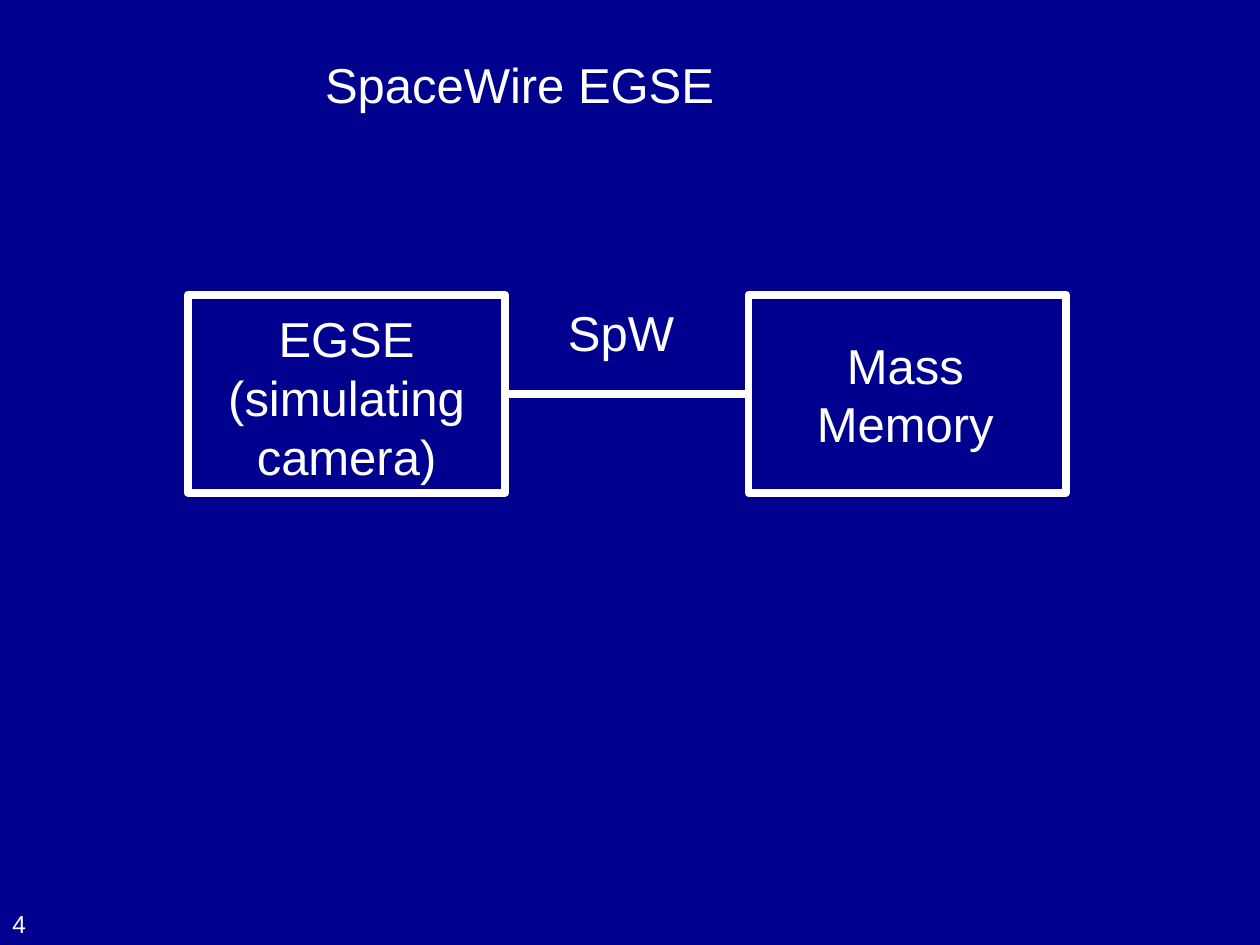
from pptx import Presentation, util as u
from pptx.dml.color import RGBColor
from pptx.enum import shapes, text
from pptx.oxml import parse_xml
from pptx.oxml.ns import nsdecls

WHITE, NAVY = "FFFFFF", "00008E"
BOX_WIDTH, BOX_HEIGHT, BOX_TOP = 2.52, 1.57, 2.34
EGSE_LEFT, MEMORY_LEFT = 1.49, 5.94


def paint(color_format, color):
    """Apply a hex colour to a colour format."""
    color_format.rgb = RGBColor.from_string(color)


def inches(*lengths):
    """Turn plain numbers into inch lengths."""
    return [u.Inches(length) for length in lengths]


def write(holder, wording, size=28, align=text.PP_ALIGN.LEFT,
          anchor=text.MSO_ANCHOR.TOP):
    """Fill a shape with formatted paragraphs, one for each line of wording."""
    frame = holder.text_frame
    frame.text = wording
    frame.word_wrap = True
    frame.auto_size = text.MSO_AUTO_SIZE.NONE
    frame.vertical_anchor = anchor
    for paragraph in frame.paragraphs:
        paragraph.alignment = align
        paragraph.line_spacing = 1.0
        paragraph.space_before = u.Pt(0)
        paragraph.font.size = u.Pt(size)
        paragraph.font.name = "Arial"
        paint(paragraph.font.color, WHITE)


def outline(line):
    """Give a line the thick white stroke of the diagram."""
    line.fill.solid()
    paint(line.fill.fore_color, WHITE)
    line.width = u.Pt(4.5)


def add_label(slide, box, wording, **style):
    """Place a text box in the given box."""
    write(slide.shapes.add_textbox(*inches(*box)), wording, **style)


def add_heading(slide, box, wording):
    """Move the title placeholder to the given box and fill it."""
    heading = slide.shapes.title
    heading.left, heading.top, heading.width, heading.height = inches(*box)
    write(heading, wording, anchor=text.MSO_ANCHOR.MIDDLE)


def add_unit(slide, box, wording, label_box):
    """Draw one outlined unit with its centred label."""
    unit = slide.shapes.add_shape(shapes.MSO_SHAPE.RECTANGLE, *inches(*box))
    unit.shadow.inherit = False
    unit.fill.background()
    outline(unit.line)
    add_label(slide, label_box, wording, align=text.PP_ALIGN.CENTER)
    return unit


def add_link(slide, box, wording, source, target):
    """Join two units side to side and label the link."""
    link = slide.shapes.add_connector(shapes.MSO_CONNECTOR.STRAIGHT, 0, 0, 0, 0)
    link.begin_connect(source, 3)
    link.end_connect(target, 1)
    outline(link.line)
    link._element.spPr.append(parse_xml(f"<a:effectLst {nsdecls('a')}/>"))
    add_label(slide, box, wording)


def main():
    """Build the slide and save it."""
    deck = Presentation()
    deck.slide_width, deck.slide_height = inches(10, 7.5)
    slide = deck.slides.add_slide(deck.slide_layouts[5])
    slide.background.fill.solid()
    paint(slide.background.fill.fore_color, NAVY)
    add_heading(slide, (2.48, 0.21, 7.52, 0.92), "SpaceWire EGSE")
    add_label(slide, (0, 6.98, 1.06, 0.52), "4", size=14,
              anchor=text.MSO_ANCHOR.BOTTOM)
    egse = add_unit(slide, (EGSE_LEFT, BOX_TOP, BOX_WIDTH, BOX_HEIGHT),
                    "EGSE\n(simulating camera)", (1.54, 2.4, 2.42, 1.51))
    memory = add_unit(slide, (MEMORY_LEFT, BOX_TOP, BOX_WIDTH, BOX_HEIGHT),
                      "Mass\nMemory", (6.36, 2.61, 1.65, 1.04))
    add_link(slide, (4.41, 2.35, 1.14, 0.57), "SpW", egse, memory)
    deck.save("out.pptx")


if __name__ == "__main__":
    main()
